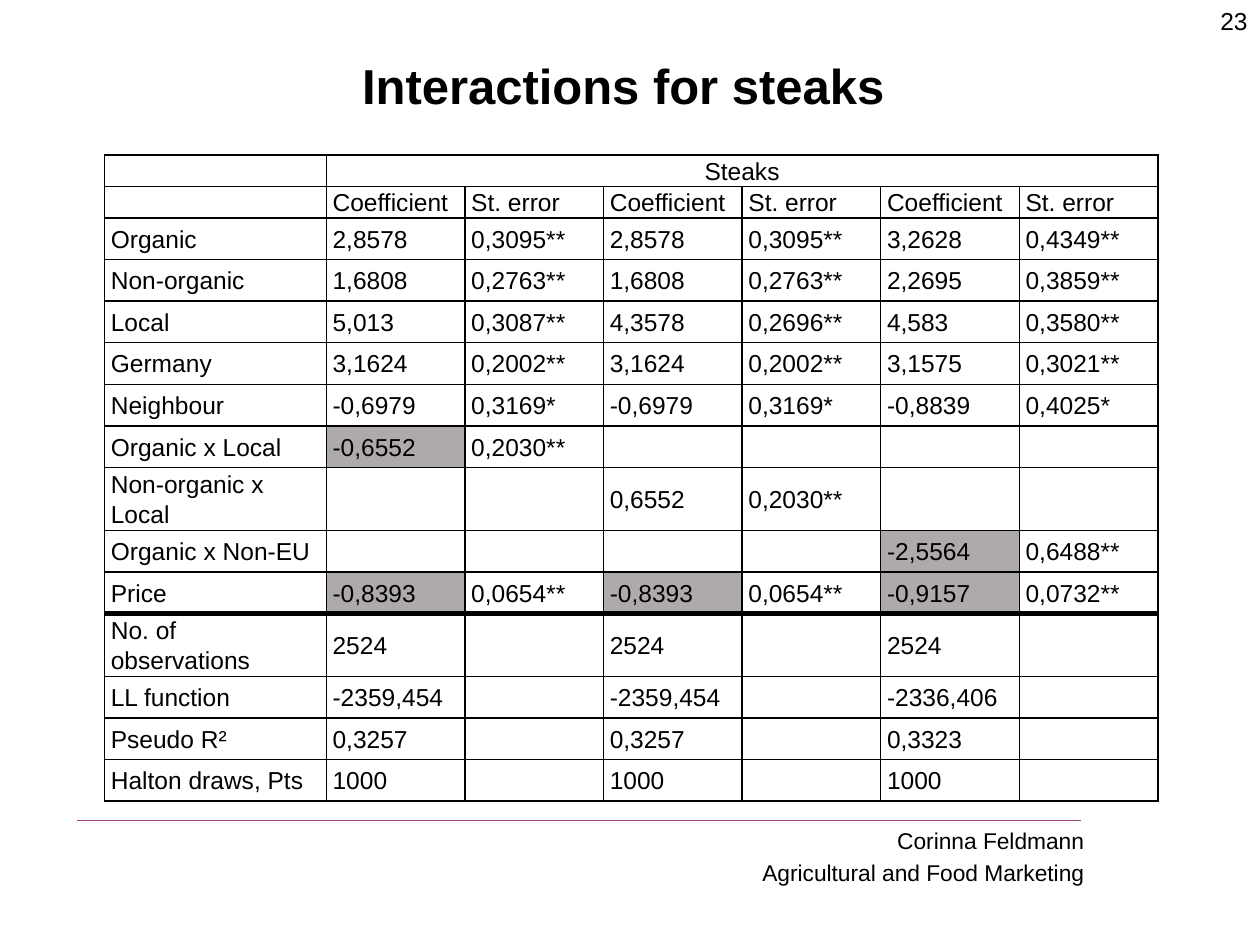
from lxml.etree import SubElement
from pptx import Presentation
from pptx.dml.color import RGBColor
from pptx.enum.shapes import MSO_CONNECTOR
from pptx.enum.text import MSO_ANCHOR, PP_ALIGN
from pptx.oxml.ns import qn
from pptx.util import Inches, Pt

BLACK = RGBColor(0x00, 0x00, 0x00)
GREY = RGBColor(0xAE, 0xAA, 0xAA)
PURPLE = RGBColor(0xA4, 0x42, 0x7A)
FONT = "Arial"
TABLE_SIZE = 14

COLUMN_WIDTHS = [1.76] + [1.1] * 6
HEADER_HEIGHT, ROW_HEIGHT, TWO_LINE_HEIGHT = 0.24, 0.33, 0.47
TWO_LINE_LABELS = {"Non-organic x Local"}
LAST_COEFFICIENT = "Price"

ROWS = [
    ["", "Steaks", "", "", "", "", ""],
    [""] + ["Coefficient", "St. error"] * 3,
    ["Organic", "2,8578", "0,3095**", "2,8578", "0,3095**", "3,2628", "0,4349**"],
    ["Non-organic", "1,6808", "0,2763**", "1,6808", "0,2763**", "2,2695", "0,3859**"],
    ["Local", "5,013", "0,3087**", "4,3578", "0,2696**", "4,583", "0,3580**"],
    ["Germany", "3,1624", "0,2002**", "3,1624", "0,2002**", "3,1575", "0,3021**"],
    ["Neighbour", "-0,6979", "0,3169*", "-0,6979", "0,3169*", "-0,8839", "0,4025*"],
    ["Organic x Local", "-0,6552", "0,2030**", "", "", "", ""],
    ["Non-organic x Local", "", "", "0,6552", "0,2030**", "", ""],
    ["Organic x Non-EU", "", "", "", "", "-2,5564", "0,6488**"],
    ["Price", "-0,8393", "0,0654**", "-0,8393", "0,0654**", "-0,9157", "0,0732**"],
    ["No. of observations", "2524", "", "2524", "", "2524", ""],
    ["LL function", "-2359,454", "", "-2359,454", "", "-2336,406", ""],
    ["Pseudo R²", "0,3257", "", "0,3257", "", "0,3323", ""],
    ["Halton draws, Pts", "1000", "", "1000", "", "1000", ""],
]
HIGHLIGHTS = {
    "Organic x Local": {1},
    "Organic x Non-EU": {5},
    "Price": {1, 3, 5},
}


def style_font(font, size, bold=False):
    font.name = FONT
    font.size = Pt(size)
    font.bold = bold
    font.color.rgb = BLACK


def add_text(page, left, top, width, height, lines, size, align,
             anchor=MSO_ANCHOR.TOP, bold=False, gap=0):
    box = page.shapes.add_textbox(Inches(left), Inches(top), Inches(width), Inches(height))
    frame = box.text_frame
    frame.word_wrap = True
    frame.vertical_anchor = anchor
    frame.text = "\n".join(lines)
    for index, para in enumerate(frame.paragraphs):
        para.alignment = align
        para.space_before = Pt(gap if index else 0)
        style_font(para.font, size, bold)


def add_rule(page, left, right, height):
    rule = page.shapes.add_connector(
        MSO_CONNECTOR.STRAIGHT, Inches(right), Inches(height), Inches(left), Inches(height))
    rule.line.color.rgb = PURPLE
    rule.line.width = Pt(0.75)
    SubElement(rule.element.spPr, qn("a:effectLst"))


def set_borders(cell, top, bottom):
    """Draw black borders, one point wide at the sides."""
    properties = cell._tc.get_or_add_tcPr()
    for side, width in (("L", 1), ("R", 1), ("T", top), ("B", bottom)):
        line = SubElement(properties, qn(f"a:ln{side}"), w=str(Pt(width)))
        fill = SubElement(line, qn("a:solidFill"))
        SubElement(fill, qn("a:srgbClr"), val=str(BLACK))


def fill_cell(cell, text, highlighted):
    cell.margin_left = cell.margin_right = Inches(0.05)
    cell.margin_top = cell.margin_bottom = 0
    cell.vertical_anchor = MSO_ANCHOR.MIDDLE
    if highlighted:
        cell.fill.solid()
        cell.fill.fore_color.rgb = GREY
    else:
        cell.fill.background()
    cell.text = text
    para = cell.text_frame.paragraphs[0]
    para.line_spacing = 1.07
    style_font(para.font, TABLE_SIZE)
    if not text:
        # An empty paragraph takes its height from its end mark.
        SubElement(para._p, qn("a:endParaRPr"), sz=str(TABLE_SIZE * 100))


def row_height(index, label):
    if index < 2:
        return HEADER_HEIGHT
    return TWO_LINE_HEIGHT if label in TWO_LINE_LABELS else ROW_HEIGHT


def add_results_table(page):
    heights = [row_height(index, row[0]) for index, row in enumerate(ROWS)]
    table = page.shapes.add_table(
        len(ROWS), len(COLUMN_WIDTHS), Inches(0.83), Inches(1.23),
        Inches(sum(COLUMN_WIDTHS)), Inches(sum(heights))).table
    table.first_row = table.horz_banding = False
    for column, width in zip(table.columns, COLUMN_WIDTHS):
        column.width = Inches(width)

    thick_row = [row[0] for row in ROWS].index(LAST_COEFFICIENT)
    for r, (row, height) in enumerate(zip(ROWS, heights)):
        table.rows[r].height = Inches(height)
        for c, text in enumerate(row):
            cell = table.cell(r, c)
            set_borders(cell, top=3 if r == thick_row + 1 else 1,
                        bottom=3 if r == thick_row else 1)
            fill_cell(cell, text, c in HIGHLIGHTS.get(row[0], ()))

    heading = table.cell(0, 1)
    heading.merge(table.cell(0, 6))
    heading.text_frame.paragraphs[0].alignment = PP_ALIGN.CENTER


def main():
    deck = Presentation()
    deck.slide_width, deck.slide_height = Inches(10), Inches(7.5)
    page = deck.slides.add_slide(deck.slide_layouts[6])
    add_text(page, 4.53, 6.51, 4.17, 0.58,
             ["Corinna Feldmann", "Agricultural and Food Marketing"],
             13, PP_ALIGN.RIGHT, gap=3)
    add_rule(page, 0.61, 8.58, 6.51)
    add_text(page, 0.5, 0.05, 9, 1.25, ["Interactions for steaks "], 28,
             PP_ALIGN.CENTER, MSO_ANCHOR.MIDDLE, bold=True)
    add_results_table(page)
    add_text(page, 9.49, 0, 0.51, 0.52, ["23"], TABLE_SIZE, PP_ALIGN.RIGHT)
    deck.save("out.pptx")


if __name__ == "__main__":
    main()
